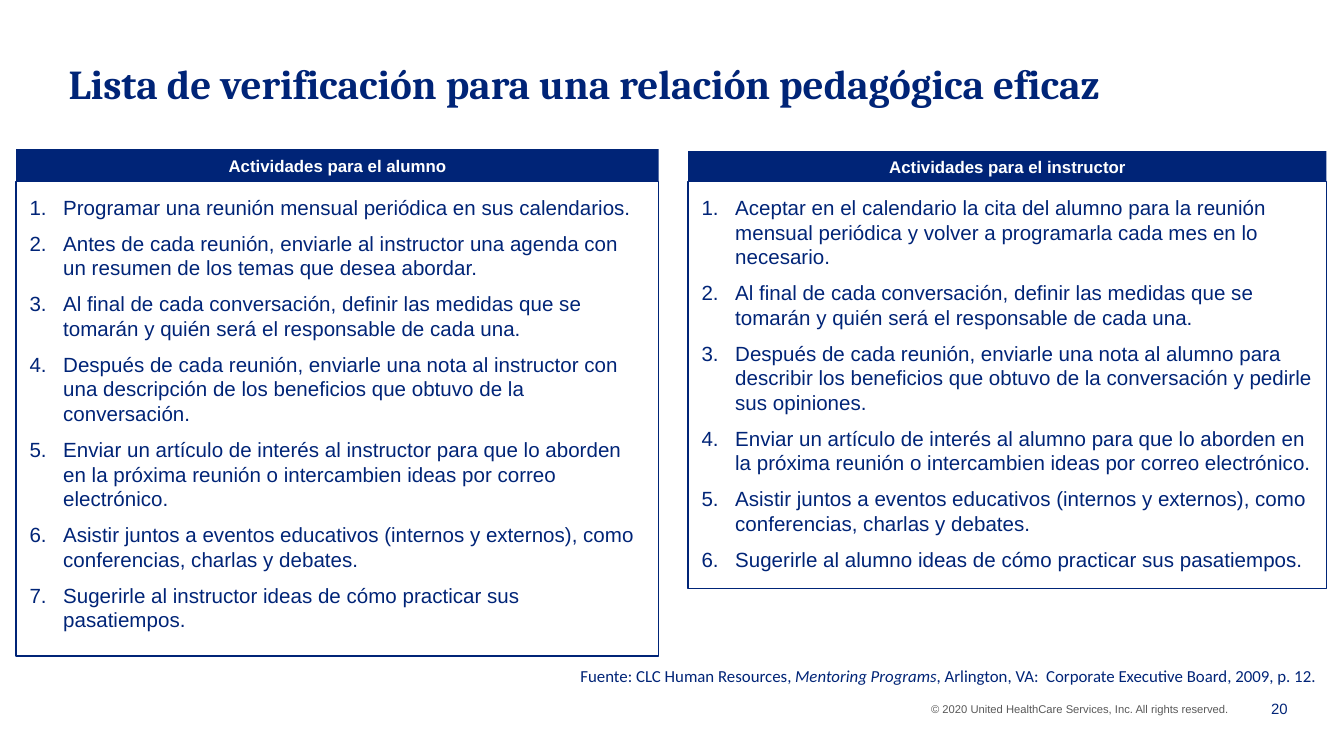
from dataclasses import dataclass
from pptx import Presentation
from pptx import util as u
from pptx.dml import color
from pptx.enum import text
from pptx.oxml import xmlchemy


@dataclass(frozen=True)
class Theme:
    navy: str = "002477"
    gray: str = "595959"
    white: str = "FFFFFF"
    serif: str = "Cambria"
    sans: str = "Arial"
    source: str = "Calibri"
    title: int = 22
    body: int = 11
    heading: int = 9
    page: int = 8
    legal: int = 6


theme = Theme()
WIDTH = 10
HEIGHT = WIDTH * 9 / 16
LIST_TOP = 24

TITLE = "Lista de verificación para una relación pedagógica eficaz"
COLUMNS = [
    {
        "left": 1.2, "width": 47.8, "heading_height": 4.27, "list_height": 62.76,
        "heading": "Actividades para el alumno",
        "items": [
            "Programar una reunión mensual periódica en sus calendarios.",
            "Antes de cada reunión, enviarle al instructor una agenda con un resumen de los temas que desea abordar.",
            "Al final de cada conversación, definir las medidas que se tomarán y quién será el responsable de cada una.",
            "Después de cada reunión, enviarle una nota al instructor con una descripción de los beneficios que obtuvo de la conversación.",
            "Enviar un artículo de interés al instructor para que lo aborden en la próxima reunión o intercambien ideas por correo electrónico.",
            "Asistir juntos a eventos educativos (internos y externos), como conferencias, charlas y debates.",
            "Sugerirle al instructor ideas de cómo practicar sus pasatiempos.",
        ],
    },
    {
        "left": 51.2, "width": 47.5, "heading_height": 4, "list_height": 53.87,
        "heading": "Actividades para el instructor",
        "items": [
            "Aceptar en el calendario la cita del alumno para la reunión mensual periódica y volver a programarla cada mes en lo necesario.",
            "Al final de cada conversación, definir las medidas que se tomarán y quién será el responsable de cada una.",
            "Después de cada reunión, enviarle una nota al alumno para describir los beneficios que obtuvo de la conversación y pedirle sus opiniones.",
            "Enviar un artículo de interés al alumno para que lo aborden en la próxima reunión o intercambien ideas por correo electrónico.",
            "Asistir juntos a eventos educativos (internos y externos), como conferencias, charlas y debates.",
            "Sugerirle al alumno ideas de cómo practicar sus pasatiempos.",
        ],
    },
]
SOURCE = [
    ("Fuente: CLC Human Resources, ", False),
    ("Mentoring Programs", True),
    (", Arlington, VA:  Corporate Executive Board, 2009, p. 12.", False),
]
COPYRIGHT = "© 2020 United HealthCare Services, Inc. All rights reserved."
PAGE = "20"


def set_all(target, values):
    for name, value in values.items():
        setattr(target, name, value)


def place(shape, left, top, width, height):
    set_all(shape, {
        "left": u.Inches(WIDTH * left / 100), "top": u.Inches(HEIGHT * top / 100),
        "width": u.Inches(WIDTH * width / 100), "height": u.Inches(HEIGHT * height / 100),
    })


def set_frame(shape, anchor=text.MSO_ANCHOR.TOP, inset=0.05):
    set_all(shape.text_frame, {
        "word_wrap": True, "auto_size": text.MSO_AUTO_SIZE.NONE, "vertical_anchor": anchor,
        "margin_left": u.Inches(0.1), "margin_right": u.Inches(0.1),
        "margin_top": u.Inches(inset), "margin_bottom": u.Inches(inset),
    })


def paint(shape, fill):
    shape.fill.solid()
    shape.fill.fore_color.rgb = color.RGBColor.from_string(fill)


def number(paragraph):
    properties = paragraph._p.get_or_add_pPr()
    properties.set("marL", str(u.Inches(0.25)))
    properties.set("indent", str(-u.Inches(0.25)))
    bullet = xmlchemy.OxmlElement("a:buFont")
    bullet.set("typeface", "+mj-lt")
    properties.append(bullet)
    numbering = xmlchemy.OxmlElement("a:buAutoNum")
    numbering.set("type", "arabicPeriod")
    properties.append(numbering)


def write(paragraph, runs, size, font=theme.sans, ink=theme.navy, bold=False, **layout):
    set_all(paragraph, {"alignment": text.PP_ALIGN.LEFT, "space_before": u.Pt(0), **layout})
    for words, italic in runs:
        run = paragraph.add_run()
        run.text = words
        set_all(run.font, {"name": font, "size": u.Pt(size), "bold": bold, "italic": italic})
        run.font.color.rgb = color.RGBColor.from_string(ink)


def add_heading(shape, column):
    height = column["heading_height"]
    place(shape, column["left"], LIST_TOP - height, column["width"], height)
    set_frame(shape, text.MSO_ANCHOR.MIDDLE, 0)
    paint(shape, theme.navy)
    write(shape.text_frame.paragraphs[0], [(column["heading"], False)], theme.heading,
          ink=theme.white, bold=True, alignment=text.PP_ALIGN.CENTER)


def add_list(shape, column):
    place(shape, column["left"], LIST_TOP, column["width"], column["list_height"])
    set_frame(shape, inset=0.1)
    paint(shape, theme.white)
    shape.line.color.rgb = color.RGBColor.from_string(theme.navy)
    shape.line.width = u.Pt(0.75)
    frame = shape.text_frame
    for index, item in enumerate(column["items"]):
        paragraph = frame.add_paragraph() if index else frame.paragraphs[0]
        number(paragraph)
        write(paragraph, [(item, False)], theme.body, space_after=u.Pt(6))


def add_label(slide, box, runs, size, anchor=text.MSO_ANCHOR.TOP, inset=0.05, **style):
    shape = slide.shapes.add_textbox(0, 0, 0, 0)
    place(shape, *box)
    set_frame(shape, anchor, inset)
    write(shape.text_frame.paragraphs[0], runs, size, **style)


def main():
    presentation = Presentation()
    set_all(presentation, {"slide_width": u.Inches(WIDTH), "slide_height": u.Inches(HEIGHT)})
    slide = presentation.slides.add_slide(presentation.slide_layouts.get_by_name("Comparison"))
    title, *areas = slide.placeholders

    place(title, 4.1, 6.8, 92, 10.67)
    set_frame(title)
    write(title.text_frame.paragraphs[0], [(TITLE, False)], theme.title, theme.serif, bold=True)

    for column, heading, body in zip(COLUMNS, areas[::2], areas[1::2]):
        add_heading(heading, column)
        add_list(body, column)

    add_label(slide, (42.2, 88.1, 57.8, 2.67), SOURCE, theme.heading, inset=0, font=theme.source)
    add_label(slide, (68.3, 92.09, 25.8, 3.56), [(COPYRIGHT, False)], theme.legal, ink=theme.gray)
    add_label(slide, (92.9, 91.02, 3.9, 5.51), [(PAGE, False)], theme.page,
              text.MSO_ANCHOR.MIDDLE, alignment=text.PP_ALIGN.RIGHT)
    presentation.save("out.pptx")


if __name__ == "__main__":
    main()
